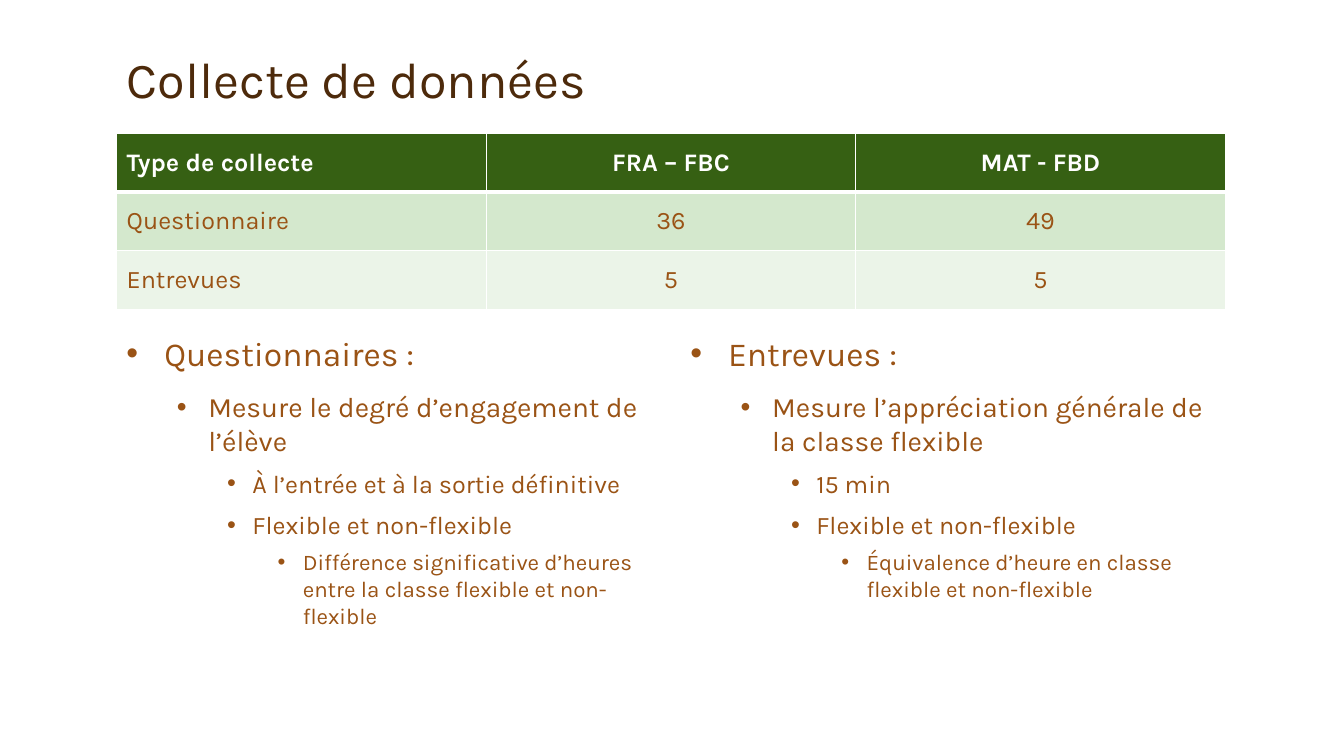
from lxml import etree
from pptx import Presentation
from pptx import util as u
from pptx.dml.color import RGBColor
from pptx.enum import text
from pptx.oxml import ns

PX = 9525  # EMU per px, 96 px to the inch
FONT = "Karla"
TITLE_BROWN = RGBColor(0x4D, 0x2A, 0x0B)
TEXT_BROWN = RGBColor(0x9A, 0x53, 0x15)
WHITE = RGBColor(0xFF, 0xFF, 0xFF)
HEADER_GREEN = RGBColor(0x36, 0x60, 0x13)
ROW_GREENS = (RGBColor(0xD4, 0xE8, 0xCD), RGBColor(0xEB, 0xF4, 0xE8))

# Per outline level: text size, space before, left margin in px, hanging in px
LEVELS = ((24, 18, 36, 36), (20, 12, 78, 30), (18, 8, 120, 24), (16, 6, 168, 24))

COLLECTION = (
    ("Type de collecte", "FRA – FBC", "MAT - FBD"),
    ("Questionnaire", "36", "49"),
    ("Entrevues", "5", "5"),
)
QUESTIONNAIRES = (
    (0, "Questionnaires :"),
    (1, "Mesure le degré d’engagement de l’élève"),
    (2, "À l’entrée et à la sortie définitive"),
    (2, "Flexible et non-flexible"),
    (3, "Différence significative d’heures entre la classe flexible et non-flexible"),
)
INTERVIEWS = (
    (0, "Entrevues :"),
    (1, "Mesure l’appréciation générale de la classe flexible"),
    (2, "15 min"),
    (2, "Flexible et non-flexible"),
    (3, "Équivalence d’heure en classe flexible et non-flexible"),
)


class SlideBuilder:
    def __init__(self, width, height):
        self.deck = Presentation()
        self.deck.slide_width, self.deck.slide_height = width * PX, height * PX
        self.slide = self.deck.slides.add_slide(self.deck.slide_layouts[5])

    def style(self, paragraph, size, color, bold=False):
        font = paragraph.font
        font.name, font.size, font.bold = FONT, u.Pt(size), bold
        font.color.rgb = color

    def title(self, wording, left, top, width, height):
        heading = self.slide.shapes.title
        heading.left, heading.top = left * PX, top * PX
        heading.width, heading.height = width * PX, height * PX
        frame = heading.text_frame
        frame.text = wording
        frame.auto_size = text.MSO_AUTO_SIZE.NONE
        frame.vertical_anchor = text.MSO_ANCHOR.BOTTOM
        paragraph = frame.paragraphs[0]
        paragraph.alignment = text.PP_ALIGN.LEFT
        paragraph.line_spacing = 0.9
        self.style(paragraph, 36, TITLE_BROWN)

    def border(self, cell, side, points):
        line = etree.SubElement(cell._tc.get_or_add_tcPr(), ns.qn(f"a:ln{side}"),
                                w=str(u.Pt(points)))
        fill = etree.SubElement(line, ns.qn("a:solidFill"))
        etree.SubElement(fill, ns.qn("a:srgbClr"), val=str(WHITE))

    def table(self, rows, left, top, column_width, row_height):
        count = len(rows[0])
        grid = self.slide.shapes.add_table(
            len(rows), count, left * PX, top * PX,
            column_width * count * PX, row_height * len(rows) * PX).table
        for r, row in enumerate(rows):
            grid.rows[r].height = row_height * PX
            for c, wording in enumerate(row):
                cell = grid.cell(r, c)
                cell.text = wording
                cell.vertical_anchor = text.MSO_ANCHOR.MIDDLE
                for side in "LRTB":
                    below_header = (r, side) in ((0, "B"), (1, "T"))
                    self.border(cell, side, 3 if below_header else 1)
                cell.fill.solid()
                cell.fill.fore_color.rgb = ROW_GREENS[r - 1] if r else HEADER_GREEN
                paragraph = cell.text_frame.paragraphs[0]
                paragraph.alignment = text.PP_ALIGN.CENTER if c else text.PP_ALIGN.LEFT
                self.style(paragraph, 18, TEXT_BROWN if r else WHITE, bold=r == 0)

    def outline(self, items, left, top, width, height):
        frame = self.slide.shapes.add_textbox(
            left * PX, top * PX, width * PX, height * PX).text_frame
        frame.word_wrap = True
        for i, (level, wording) in enumerate(items):
            paragraph = frame.add_paragraph() if i else frame.paragraphs[0]
            size, before, margin, hanging = LEVELS[level]
            paragraph.text, paragraph.level = wording, level
            properties = paragraph._p.get_or_add_pPr()
            properties.set("marL", str(margin * PX))
            properties.set("indent", str(-hanging * PX))
            etree.SubElement(properties, ns.qn("a:buFont"), typeface="Arial")
            etree.SubElement(properties, ns.qn("a:buChar"), char="•")
            if i:
                paragraph.space_before = u.Pt(before)
            self.style(paragraph, size, TEXT_BROWN)


def main():
    builder = SlideBuilder(1280, 720)
    # Title
    builder.title("Collecte de données", 111, 32, 1056, 77)
    # Numbers collected
    builder.table(COLLECTION, 111, 127, 352, 56)
    # Two columns of details
    for left, items in ((111, QUESTIONNAIRES), (648, INTERVIEWS)):
        builder.outline(items, left, 312, 520, 396)
    builder.deck.save("out.pptx")


if __name__ == "__main__":
    main()
